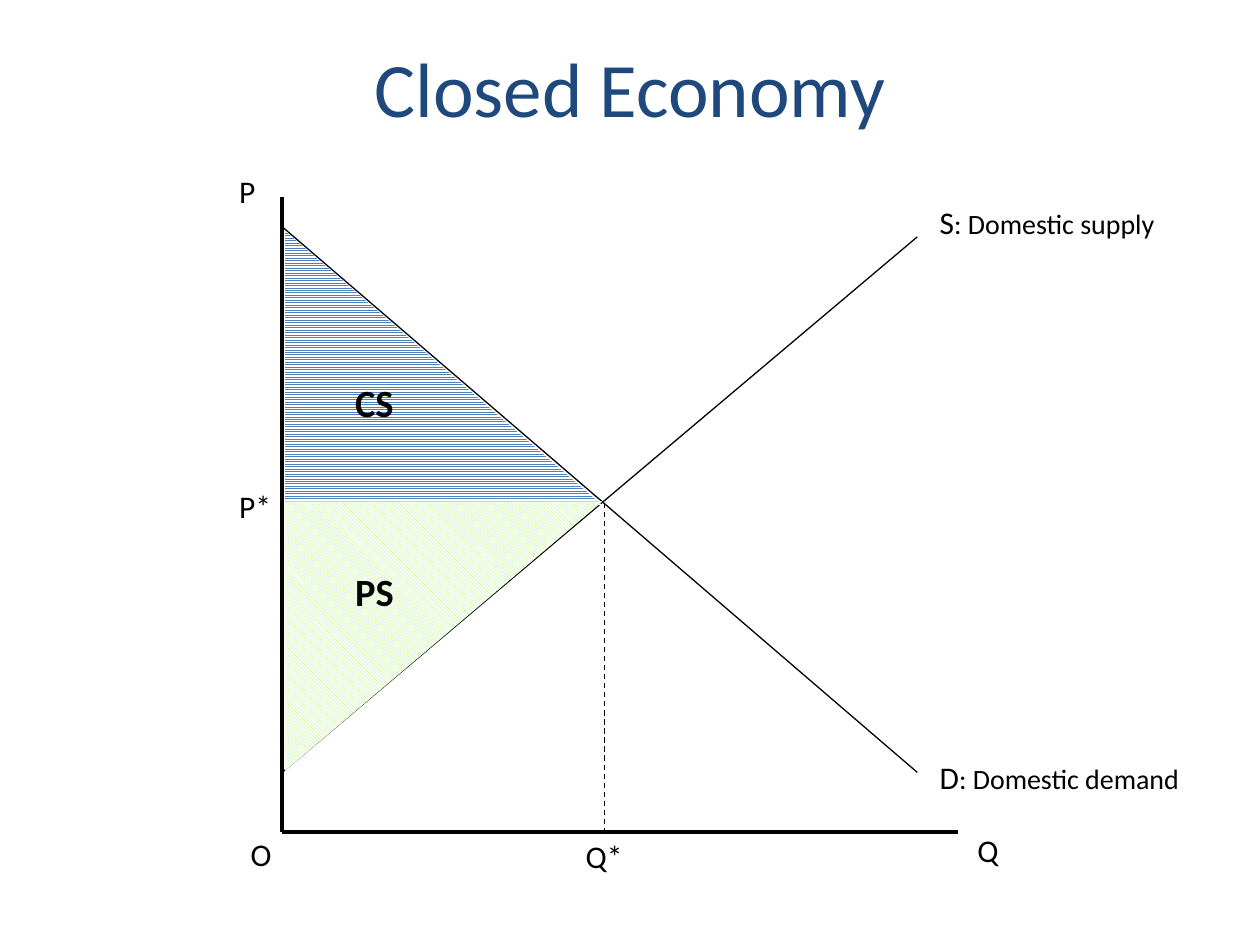
from dataclasses import dataclass

from lxml.etree import SubElement
from pptx import Presentation
from pptx.dml.color import RGBColor
from pptx.enum.dml import MSO_LINE, MSO_PATTERN
from pptx.enum.shapes import MSO_CONNECTOR, MSO_SHAPE
from pptx.enum.text import MSO_ANCHOR, MSO_AUTO_SIZE, PP_ALIGN
from pptx.oxml.ns import qn
from pptx.slide import Slide
from pptx.text.text import _Paragraph
from pptx.util import Inches, Pt

COLORS = {
    "ink": "000000",
    "title": "1F497D",
    "consumer": "4F81BD",
    "producer": "96FD49",
    "paper": "FFFFFF",
}
FONT = "Calibri"
ORIGIN_X, ORIGIN_Y = 2.24, 6.6
EQUILIBRIUM_X, EQUILIBRIUM_Y = 4.8, 3.99
CURVE_END_X, CURVE_LOW_Y = 7.28, 6.13


@dataclass(frozen=True)
class Line:
    start: tuple[float, float]
    end: tuple[float, float]
    width: float = 0.75
    dashed: bool = False


@dataclass(frozen=True)
class Surplus:
    left: float
    top: float
    width: float
    height: float
    pattern: MSO_PATTERN
    color: str
    rotation: int = 0


@dataclass(frozen=True)
class Label:
    left: float
    top: float
    width: float
    runs: tuple[tuple[str, int], ...]
    height: float = 0.4
    bold: bool = False
    wrap: bool = False


LINES = [
    Line((ORIGIN_X, 1.56), (ORIGIN_X, ORIGIN_Y), 2.25),
    Line((ORIGIN_X, ORIGIN_Y), (7.6, ORIGIN_Y), 2.25),
    Line((ORIGIN_X, CURVE_LOW_Y), (CURVE_END_X, 1.88)),
    Line((ORIGIN_X, 1.8), (CURVE_END_X, CURVE_LOW_Y)),
    Line((4.76, EQUILIBRIUM_Y), (ORIGIN_X, EQUILIBRIUM_Y), dashed=True),
    Line((EQUILIBRIUM_X, EQUILIBRIUM_Y), (EQUILIBRIUM_X, 6.59), dashed=True),
]
SURPLUSES = [
    Surplus(2.26, 1.83, 2.52, 2.18, MSO_PATTERN.NARROW_HORIZONTAL, "consumer"),
    Surplus(2.45, 3.79, 2.14, 2.52, MSO_PATTERN.DARK_DOWNWARD_DIAGONAL, "producer", 90),
]
LABELS = [
    Label(7.66, 6.55, 0.37, (("Q", 18),)),
    Label(1.8, 1.32, 0.33, (("P", 18),)),
    Label(7.36, 1.56, 1.91, (("S", 18), (": Domestic supply", 16))),
    Label(7.36, 5.97, 2.11, (("D", 18), (": Domestic demand", 16))),
    Label(1.89, 6.58, 0.37, (("O", 18),)),
    Label(1.8, 3.82, 0.5, (("P*", 18),)),
    Label(4.55, 6.59, 0.49, (("Q*", 18),)),
    Label(2.72, 2.96, 0.79, (("CS", 22),), 0.47, bold=True, wrap=True),
    Label(2.72, 4.46, 0.79, (("PS", 22),), 0.47, bold=True, wrap=True),
]


def rgb(name: str) -> RGBColor:
    return RGBColor.from_string(COLORS[name])


def add_run(paragraph: _Paragraph, words: str, size: int, color: str, bold: bool = False) -> None:
    run = paragraph.add_run()
    run.text = words
    run.font.name = FONT
    run.font.size = Pt(size)
    run.font.bold = bold
    run.font.color.rgb = rgb(color)


def set_title(slide: Slide, words: str) -> None:
    title = slide.shapes.title
    title.left, title.top = Inches(0.5), Inches(0.06)
    title.width, title.height = Inches(9), Inches(1.25)
    title.text_frame.vertical_anchor = MSO_ANCHOR.MIDDLE
    heading = title.text_frame.paragraphs[0]
    heading.alignment = PP_ALIGN.CENTER
    add_run(heading, words, 44, "title")


def draw_line(slide: Slide, line: Line) -> None:
    points = [Inches(value) for value in (*line.start, *line.end)]
    connector = slide.shapes.add_connector(MSO_CONNECTOR.STRAIGHT, *points)
    connector.line.color.rgb = rgb("ink")
    connector.line.width = Pt(line.width)
    if line.dashed:
        connector.line.dash_style = MSO_LINE.DASH
    SubElement(connector._element.spPr, qn("a:effectLst"))


def draw_surplus(slide: Slide, surplus: Surplus) -> None:
    triangle = slide.shapes.add_shape(
        MSO_SHAPE.RIGHT_TRIANGLE,
        Inches(surplus.left), Inches(surplus.top),
        Inches(surplus.width), Inches(surplus.height),
    )
    triangle.rotation = surplus.rotation
    triangle.shadow.inherit = False
    triangle.line.fill.background()
    triangle.fill.patterned()
    triangle.fill.pattern = surplus.pattern
    triangle.fill.fore_color.rgb = rgb(surplus.color)
    triangle.fill.back_color.rgb = rgb("paper")


def draw_label(slide: Slide, label: Label) -> None:
    frame = slide.shapes.add_textbox(
        Inches(label.left), Inches(label.top),
        Inches(label.width), Inches(label.height),
    ).text_frame
    frame.word_wrap = label.wrap
    frame.auto_size = MSO_AUTO_SIZE.SHAPE_TO_FIT_TEXT
    for words, size in label.runs:
        add_run(frame.paragraphs[0], words, size, "ink", label.bold)


def main() -> None:
    deck = Presentation()
    deck.slide_width, deck.slide_height = Inches(10), Inches(7.5)
    slide = deck.slides.add_slide(deck.slide_layouts[5])
    set_title(slide, "Closed Economy")
    for line in LINES:
        draw_line(slide, line)
    for surplus in SURPLUSES:
        draw_surplus(slide, surplus)
    for label in LABELS:
        draw_label(slide, label)
    deck.save("out.pptx")


if __name__ == "__main__":
    main()
